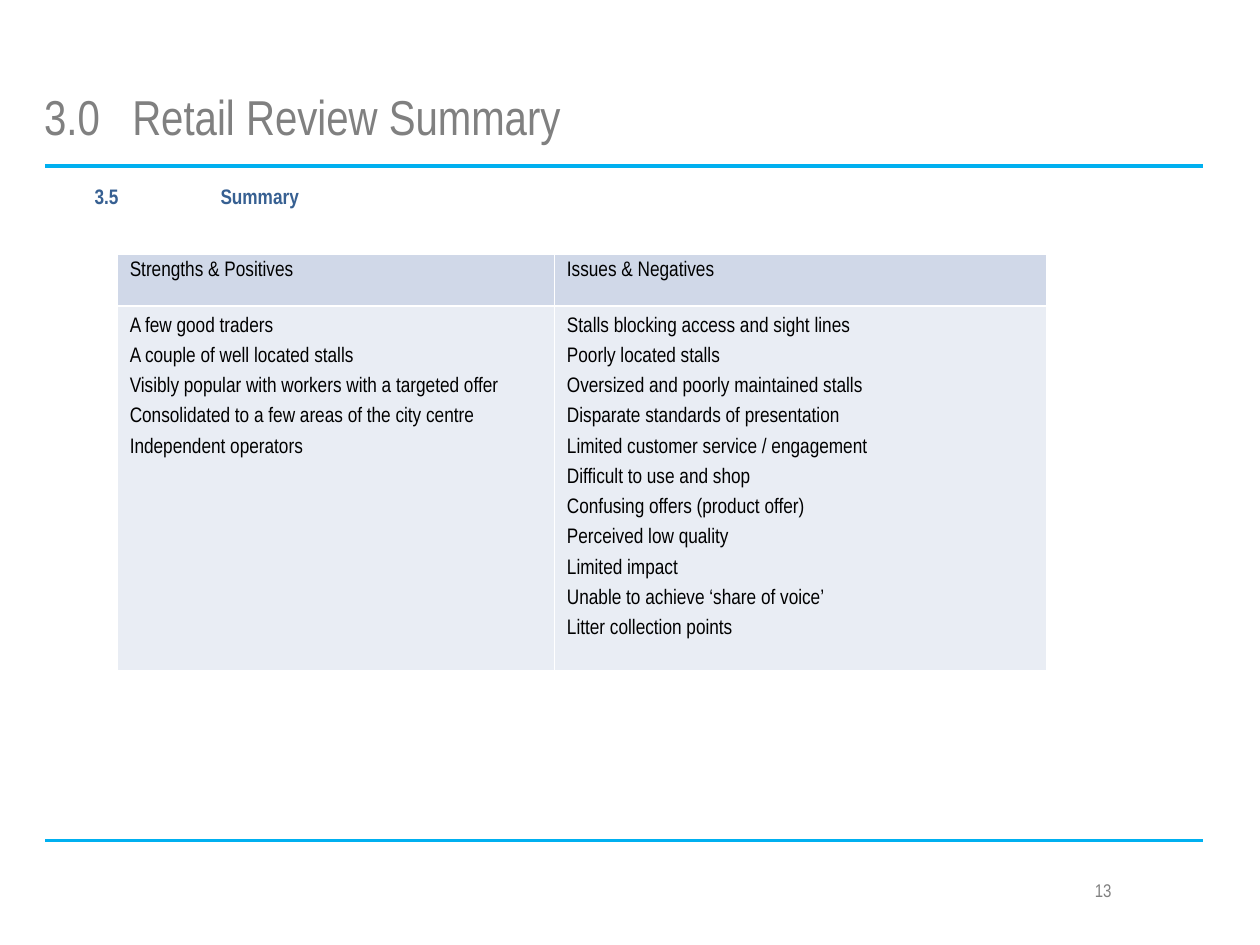
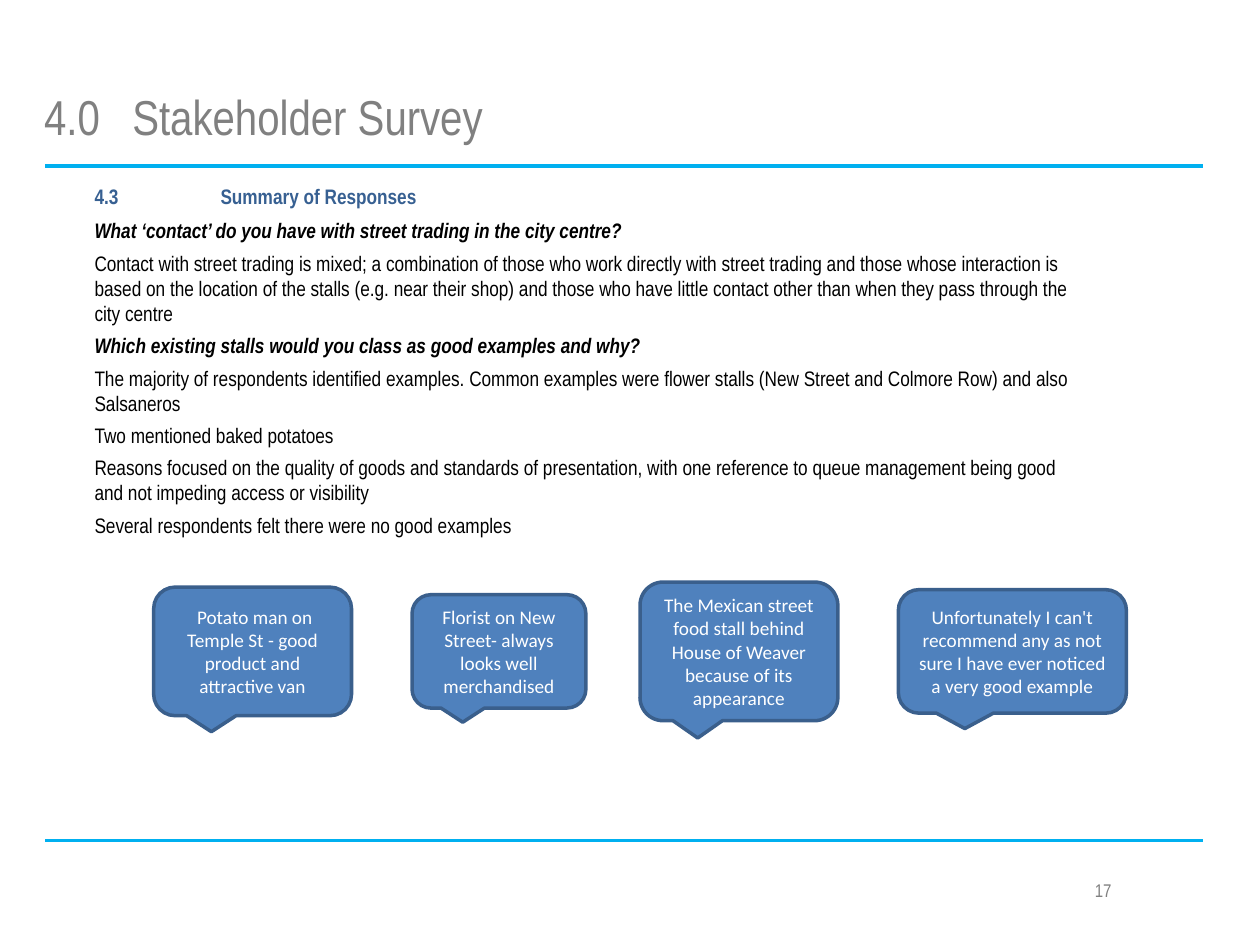
from lxml.etree import SubElement
from pptx import Presentation
from pptx.dml.color import RGBColor
from pptx.enum.shapes import MSO_CONNECTOR, MSO_SHAPE
from pptx.enum.text import MSO_ANCHOR, MSO_AUTO_SIZE, PP_ALIGN
from pptx.oxml.ns import qn
from pptx.util import Inches, Pt

# Shared style
NARROW = "Arial Narrow"
GREY, BLACK, WHITE = "808080", "000000", "FFFFFF"
RULE, HEADING = "00B0F0", "376092"
HEADER_FILL, BODY_FILL = "D0D8E8", "E9EDF4"
CALLOUT_FILL, CALLOUT_LINE = "4F81BD", "3A5F8C"
LEFT, RIGHT = 0.36, 9.55
RULES = ((1.32, 2.25), (6.67, 1.75))  # top, line width
BODY_LEFT, BODY_WIDTH = 0.75, 7.8

# Content
RETAIL = dict(title="3.0\tRetail Review Summary", heading="3.5\tSummary", number="13")
SURVEY = dict(title="4.0\tStakeholder Survey", heading="4.3\tSummary of Responses", number="17")

REVIEW = {
    "Strengths & Positives": [
        "A few good traders",
        "A couple of well located stalls",
        "Visibly popular with workers with a targeted offer",
        "Consolidated to a few areas of the city centre",
        "Independent operators",
    ],
    "Issues & Negatives": [
        "Stalls blocking access and sight lines",
        "Poorly located stalls",
        "Oversized and poorly maintained stalls",
        "Disparate standards of presentation",
        "Limited customer service / engagement",
        "Difficult to use and shop",
        "Confusing offers (product offer)",
        "Perceived low quality",
        "Limited impact",
        "Unable to achieve ‘share of voice’",
        "Litter collection points",
    ],
}
COLUMN_WIDTHS = (3.47, 3.91)
ROW_HEIGHTS = (0.41, 2.89)

# Question, then its answers
RESPONSES = [
    ("What ‘contact’ do you have with street trading in the city centre?", [
        "Contact with street trading is mixed; a combination of those who work directly with "
        "street trading and those whose interaction is based on the location of the stalls "
        "(e.g. near their shop) and those who have little contact other than when they pass "
        "through the city centre",
    ]),
    ("Which existing stalls would you class as good examples and why?", [
        "The majority of respondents identified examples. Common examples were flower stalls "
        "(New Street and Colmore Row) and also Salsaneros",
        "Two mentioned baked potatoes",
        "Reasons focused on the quality of goods and standards of presentation, with one "
        "reference to queue management being good and not impeding access or visibility",
        "Several respondents felt there were no good examples",
    ]),
]

# Quote, left, width, height; all callouts share one centre line
CALLOUT_MIDDLE = 5.17
CALLOUTS = [
    (" Potato man on Temple St - good product and attractive van", 1.22, 1.57, 1.02),
    ("Florist on New Street- always looks well merchandised", 3.27, 1.38, 0.9),
    ("The Mexican street food stall behind House of Weaver because of its appearance",
     5.08, 1.57, 1.1),
    ("Unfortunately I can't recommend any as not sure I have ever noticed a very good example",
     7.13, 1.81, 0.98),
]


def color(value):
    return RGBColor.from_string(value)


def write(frame, text, first=True, size=12, font=NARROW, fill=BLACK, bold=False, italic=False,
          align=PP_ALIGN.LEFT, before=0, after=0, leading=None, tab=None):
    """Write one paragraph, plain and without a bullet."""
    paragraph = frame.paragraphs[0] if first else frame.add_paragraph()
    properties = paragraph._p.get_or_add_pPr()
    properties.set("marL", "0")
    properties.set("indent", "0")
    if tab:
        properties.set("defTabSz", str(Inches(tab)))
    SubElement(properties, qn("a:buNone"))
    paragraph.alignment = align
    if leading:
        paragraph.line_spacing = Pt(leading)
    paragraph.space_before = Pt(0 if first else before)
    paragraph.space_after = Pt(after)
    run = paragraph.add_run()
    run.text = text
    run.font.size, run.font.name = Pt(size), font
    run.font.bold, run.font.italic = bold, italic
    run.font.color.rgb = color(fill)


def place(shape, left, top, width, height, anchor=MSO_ANCHOR.TOP):
    """Move a placeholder and return its text frame without insets."""
    shape.left, shape.top = Inches(left), Inches(top)
    shape.width, shape.height = Inches(width), Inches(height)
    frame = shape.text_frame
    frame.margin_left = frame.margin_right = frame.margin_top = frame.margin_bottom = 0
    frame.word_wrap, frame.auto_size = True, MSO_AUTO_SIZE.NONE
    frame.vertical_anchor = anchor
    return frame


def add_page(presentation, layout, title, heading, number):
    slide = presentation.slides.add_slide(presentation.slide_layouts[layout])
    # Rules above and below the content
    for top, width in RULES:
        line = slide.shapes.add_connector(MSO_CONNECTOR.STRAIGHT, Inches(LEFT), Inches(top),
                                          Inches(RIGHT), Inches(top))
        line.line.color.rgb, line.line.width = color(RULE), Pt(width)
        SubElement(line._element.spPr, qn("a:effectLst"))
    # Title, heading and page number
    frame = place(slide.shapes.title, 0.35, 0.17, 9, 0.98, MSO_ANCHOR.BOTTOM)
    write(frame, title, size=28, fill=GREY, tab=0.7)
    frame = place(slide.placeholders[1], BODY_LEFT, 1.46, BODY_WIDTH, 0.32)
    write(frame, heading, fill=HEADING, bold=True, after=2, tab=1)
    box = slide.shapes.add_textbox(Inches(7.17), Inches(6.93), Inches(1.75), Inches(0.5))
    box.text_frame.word_wrap = True
    write(box.text_frame, number, size=10.5, fill=GREY, align=PP_ALIGN.RIGHT)
    return slide


def fill_cell(cell, lines, fill, margin_top=0, leading=None):
    cell.margin_left = cell.margin_right = Inches(0.1)
    cell.margin_top, cell.margin_bottom = Inches(margin_top), 0
    properties = cell._tc.get_or_add_tcPr()
    for side in ("lnL", "lnR", "lnT", "lnB"):
        border = SubElement(properties, qn(f"a:{side}"), w=str(Pt(1)))
        SubElement(SubElement(border, qn("a:solidFill")), qn("a:srgbClr"), val=WHITE)
    cell.fill.solid()
    cell.fill.fore_color.rgb = color(fill)
    for index, text in enumerate(lines):
        write(cell.text_frame, text, first=index == 0, leading=leading)


def add_review_table(slide):
    table = slide.shapes.add_table(2, 2, Inches(0.93), Inches(2.02), Inches(sum(COLUMN_WIDTHS)),
                                   Inches(sum(ROW_HEIGHTS))).table
    table.first_row = table.horz_banding = False
    for row, height in zip(table.rows, ROW_HEIGHTS):
        row.height = Inches(height)
    for index, (header, points) in enumerate(REVIEW.items()):
        table.columns[index].width = Inches(COLUMN_WIDTHS[index])
        fill_cell(table.cell(0, index), [header], HEADER_FILL, margin_top=0.05)
        fill_cell(table.cell(1, index), points, BODY_FILL, leading=17.3)


def add_responses(slide):
    frame = place(slide.placeholders[2], BODY_LEFT, 1.73, BODY_WIDTH, 2.57)
    for index, (question, answers) in enumerate(RESPONSES):
        write(frame, question, first=index == 0, bold=True, italic=True, before=2, after=2)
        for answer in answers:
            write(frame, answer, first=False, before=2, after=2)


def add_callout(slide, quote, left, width, height):
    shape = slide.shapes.add_shape(MSO_SHAPE.ROUNDED_RECTANGULAR_CALLOUT, Inches(left),
                                   Inches(CALLOUT_MIDDLE - height / 2), Inches(width),
                                   Inches(height))
    shape.shadow.inherit = False
    shape.fill.solid()
    shape.fill.fore_color.rgb = color(CALLOUT_FILL)
    shape.line.color.rgb, shape.line.width = color(CALLOUT_LINE), Pt(2)
    shape.text_frame.word_wrap = True
    shape.text_frame.vertical_anchor = MSO_ANCHOR.MIDDLE
    write(shape.text_frame, quote, size=11, font="Calibri", fill=WHITE, align=PP_ALIGN.CENTER)


def main():
    presentation = Presentation()
    presentation.slide_width, presentation.slide_height = Inches(10), Inches(7.5)

    # Retail review: title and one body
    add_review_table(add_page(presentation, 1, **RETAIL))

    # Stakeholder survey: title and two bodies
    survey = add_page(presentation, 3, **SURVEY)
    add_responses(survey)
    for callout in CALLOUTS:
        add_callout(survey, *callout)

    presentation.save("out.pptx")


if __name__ == "__main__":
    main()
